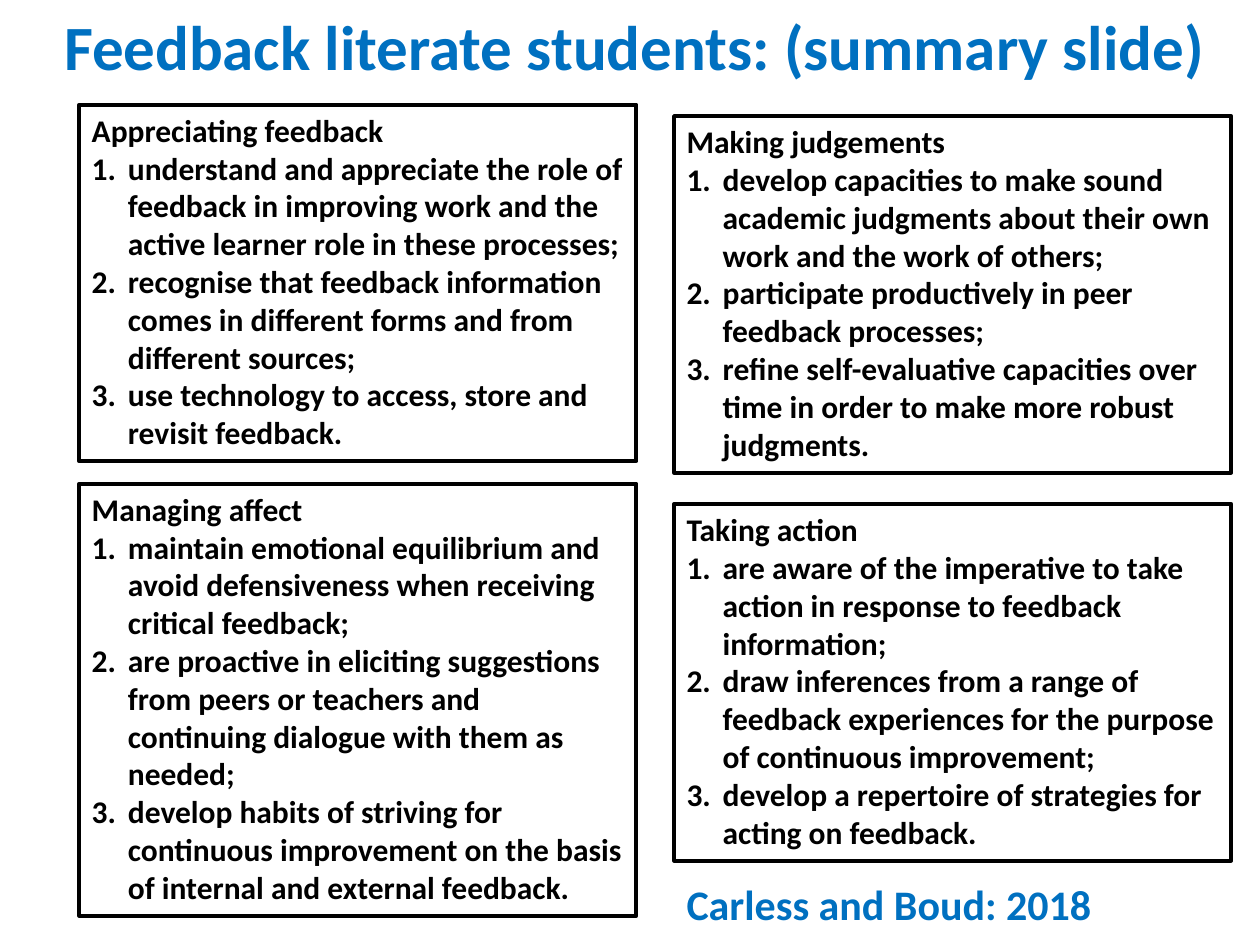
import pptx
import pptx.util
import pptx.dml.color
import pptx.enum.text
import lxml.etree
from pptx.oxml.ns import qn
from pptx.util import Cm

BLUE, BLACK = "0070C0", "000000"
LEFT_COLUMN, RIGHT_COLUMN, BOX_WIDTH = 1.6, 13.59, 11.23
NUMBER_INDENT = Cm(0.73)


def color(hex_string):
    return pptx.dml.color.RGBColor.from_string(hex_string)


def write(paragraph, text, size, hex_string):
    run = paragraph.add_run()
    run.text = text
    font_format = {"name": "Calibri", "size": pptx.util.Pt(size), "bold": True}
    for name, value in font_format.items():
        setattr(run.font, name, value)
    run.font.color.rgb = color(hex_string)


presentation = pptx.Presentation()
presentation.slide_width, presentation.slide_height = Cm(25.4), Cm(19.05)
slide = presentation.slides.add_slide(presentation.slide_layouts[5])

# Title
title = slide.shapes.title
title_place = {"left": Cm(0.69), "top": Cm(0.53), "width": Cm(24.2), "height": Cm(1.02)}
for name, value in title_place.items():
    setattr(title, name, value)
title.text_frame.vertical_anchor = pptx.enum.text.MSO_ANCHOR.MIDDLE
title.text_frame.auto_size = pptx.enum.text.MSO_AUTO_SIZE.NONE
title_paragraph = title.text_frame.paragraphs[0]
title_paragraph.alignment = pptx.enum.text.PP_ALIGN.CENTER
title_paragraph.line_spacing = 0.85
write(title_paragraph, "Feedback literate students: (summary slide)", 36, BLUE)

# Four feature boxes: left, top, height, heading, numbered points
features = [
    (LEFT_COLUMN, 2.11, 7.19, "Appreciating feedback", [
        "understand and appreciate the role of feedback in improving work and the "
        "active learner role in these processes;",
        "recognise that feedback information comes in different forms and from different sources;",
        "use technology to access, store and revisit feedback."]),
    (RIGHT_COLUMN, 2.34, 7.19, "Making judgements", [
        "develop capacities to make sound academic judgments about their own work "
        "and the work of others;",
        "participate productively in peer feedback processes;",
        "refine self-evaluative capacities over time in order to make more robust judgments."]),
    (LEFT_COLUMN, 9.75, 8.71, "Managing affect", [
        "maintain emotional equilibrium and avoid defensiveness when receiving critical feedback;",
        "are proactive in eliciting suggestions from peers or teachers and continuing "
        "dialogue with them as needed;",
        "develop habits of striving for continuous improvement on the basis of internal "
        "and external feedback."]),
    (RIGHT_COLUMN, 10.16, 7.19, "Taking action", [
        "are aware of the imperative to take action in response to feedback information;",
        "draw inferences from a range of feedback experiences for the purpose of "
        "continuous improvement;",
        "develop a repertoire of strategies for acting on feedback."]),
]
for left, top, height, heading, points in features:
    box = slide.shapes.add_textbox(Cm(left), Cm(top), Cm(BOX_WIDTH), Cm(height))
    box.line.color.rgb = color(BLACK)
    box.line.width = pptx.util.Pt(2.25)
    box.text_frame.word_wrap = True
    box.text_frame.auto_size = pptx.enum.text.MSO_AUTO_SIZE.SHAPE_TO_FIT_TEXT
    write(box.text_frame.paragraphs[0], heading, 18, BLACK)
    for point in points:
        paragraph = box.text_frame.add_paragraph()
        write(paragraph, point, 18, BLACK)
        properties = paragraph._p.get_or_add_pPr()
        properties.set("marL", str(NUMBER_INDENT))
        properties.set("indent", str(-NUMBER_INDENT))
        lxml.etree.SubElement(properties, qn("a:buFont"), typeface="+mj-lt")
        lxml.etree.SubElement(properties, qn("a:buAutoNum"), type="arabicPeriod")

# Citation
citation = slide.shapes.add_textbox(Cm(RIGHT_COLUMN), Cm(17.58), Cm(10.69), Cm(1.28))
citation.text_frame.word_wrap = True
citation.text_frame.auto_size = pptx.enum.text.MSO_AUTO_SIZE.SHAPE_TO_FIT_TEXT
write(citation.text_frame.paragraphs[0], "Carless and Boud: 2018", 24, BLUE)

presentation.save("out.pptx")
